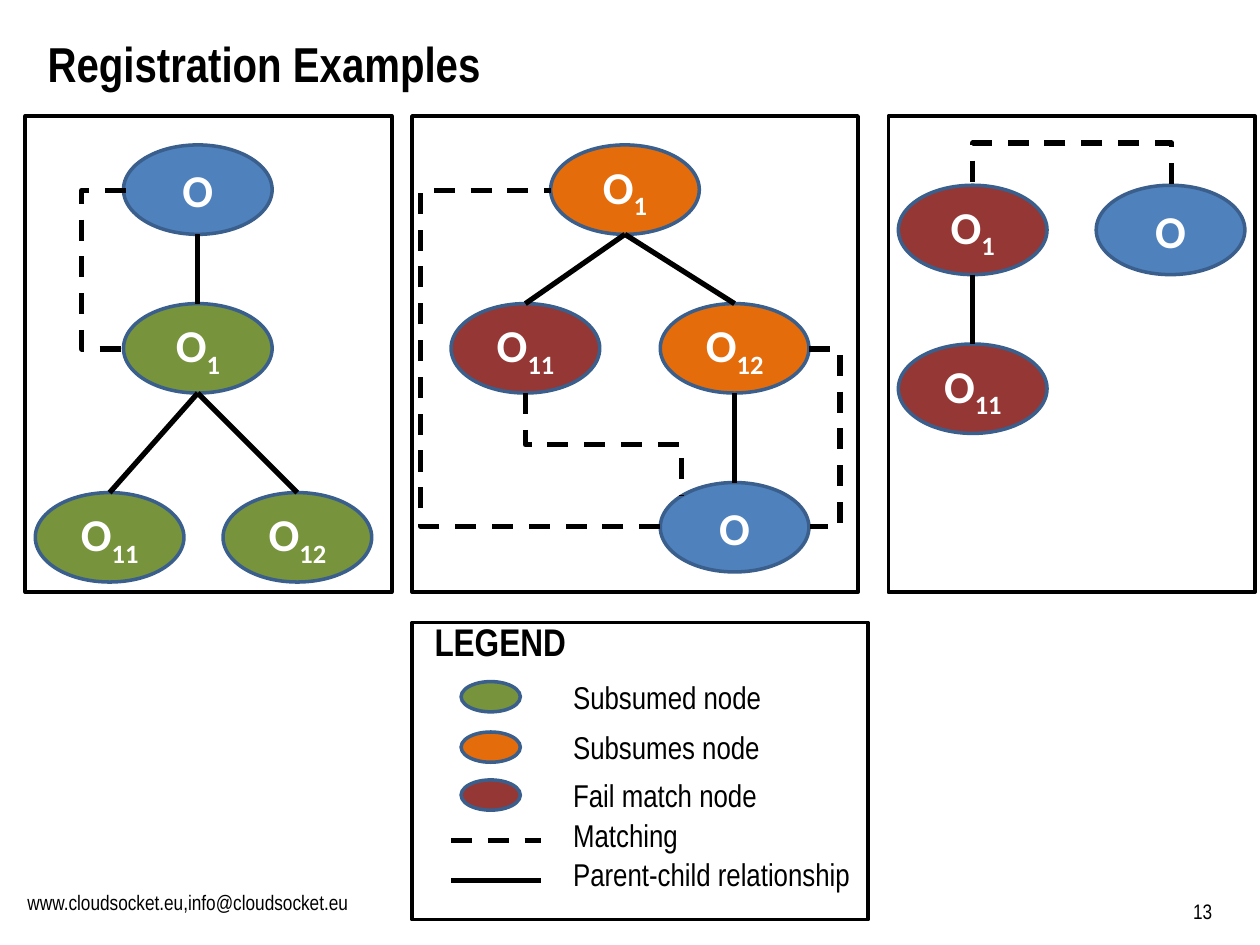
from pptx import Presentation
from pptx.dml.color import RGBColor
from pptx.enum.dml import MSO_LINE
from pptx.enum.shapes import MSO_CONNECTOR, MSO_SHAPE
from pptx.enum.text import MSO_ANCHOR, PP_ALIGN
from pptx.oxml.ns import qn
from pptx.util import Inches, Pt
from lxml.etree import SubElement

BLACK = RGBColor(0x00, 0x00, 0x00)
WHITE = RGBColor(0xFF, 0xFF, 0xFF)
BLUE = RGBColor(0x4F, 0x81, 0xBD)
GREEN = RGBColor(0x77, 0x93, 0x3C)
ORANGE = RGBColor(0xE4, 0x6C, 0x0A)
RED = RGBColor(0x95, 0x37, 0x35)
OUTLINE = RGBColor(0x3A, 0x5F, 0x8C)
NODE_WIDTH, NODE_HEIGHT = 1.18, 0.71

deck = Presentation()
deck.slide_width, deck.slide_height = Inches(10), Inches(7.5)
page = deck.slides.add_slide(deck.slide_layouts[6])


def add_outlined(kind, area, fill, outline):
    shape = page.shapes.add_shape(kind, *map(Inches, area))
    shape.shadow.inherit = False
    if fill is None:
        shape.fill.background()
    else:
        shape.fill.solid()
        shape.fill.fore_color.rgb = fill
    shape.line.color.rgb = outline
    shape.line.width = Pt(2)
    return shape


def add_line(start, end, dashed=False, bend=None, vertical=False):
    """Draw a line; bend is the x (or y, if vertical) of an elbow's middle part."""
    (x1, y1), (x2, y2) = start, end
    kind = MSO_CONNECTOR.STRAIGHT if bend is None else MSO_CONNECTOR.ELBOW
    if vertical:
        # A quarter turn about the centre makes the elbow leave downwards.
        middle_x, middle_y = (x1 + x2) / 2, (y1 + y2) / 2
        half_x, half_y = (y2 - y1) / 2, (x1 - x2) / 2
        ends = (middle_x - half_x, middle_y - half_y, middle_x + half_x, middle_y + half_y)
    else:
        ends = (x1, y1, x2, y2)
    line = page.shapes.add_connector(kind, *map(Inches, ends))
    properties = line._element.spPr
    if vertical:
        properties.find(qn("a:xfrm")).set("rot", "5400000")
    if bend is not None:
        share = (bend - y1) / (y2 - y1) if vertical else (bend - x1) / (x2 - x1)
        guides = properties.find(qn("a:prstGeom")).get_or_add_avLst()
        SubElement(guides, qn("a:gd"), name="adj1", fmla=f"val {round(share * 100000)}")
    line.line.color.rgb = BLACK
    line.line.width = Pt(3)
    if dashed:
        line.line.dash_style = MSO_LINE.DASH
    SubElement(properties, qn("a:effectLst"))
    return line


# Panels and legend frame
for frame in [(0.2, 0.92, 2.91, 3.78), (3.27, 0.92, 3.54, 3.78),
              (7.05, 0.92, 2.91, 3.78), (3.27, 4.94, 3.62, 2.36)]:
    add_outlined(MSO_SHAPE.RECTANGLE, frame, None, BLACK)

# Nodes: key, subscript, left, top, colour
nodes = {}
for key, subscript, left, top, colour in [
    ("first O", "", 0.98, 1.15, BLUE),
    ("first O1", "1", 0.98, 2.41, GREEN),
    ("first O11", "11", 0.28, 3.91, GREEN),
    ("first O12", "12", 1.77, 3.91, GREEN),
    ("second O1", "1", 4.37, 1.15, ORANGE),
    ("second O11", "11", 3.58, 2.41, RED),
    ("second O12", "12", 5.24, 2.41, ORANGE),
    ("second O", "", 5.24, 3.83, BLUE),
    ("third O1", "1", 7.13, 1.47, RED),
    ("third O11", "11", 7.13, 2.73, RED),
    ("third O", "", 8.7, 1.47, BLUE),
]:
    node = add_outlined(MSO_SHAPE.OVAL, (left, top, NODE_WIDTH, NODE_HEIGHT), colour, OUTLINE)
    node.text_frame.vertical_anchor = MSO_ANCHOR.MIDDLE
    paragraph = node.text_frame.paragraphs[0]
    paragraph.alignment = PP_ALIGN.CENTER
    for text in filter(None, ("O", subscript)):
        span = paragraph.add_run()
        span.text = text
        span.font.name, span.font.size, span.font.bold = "Calibri", Pt(26), True
        span.font.color.rgb = WHITE
        if text == subscript:
            span.font._element.set("baseline", "-25000")
    nodes[key] = (node, left + NODE_WIDTH / 2, top)

# Parent-child lines
for parent, child in [
    ("first O", "first O1"), ("first O1", "first O11"), ("first O1", "first O12"),
    ("second O1", "second O11"), ("second O1", "second O12"),
    ("second O12", "second O"), ("third O1", "third O11"),
]:
    _, parent_x, parent_top = nodes[parent]
    child_node, child_x, child_top = nodes[child]
    line = add_line((parent_x, parent_top + NODE_HEIGHT), (child_x, child_top))
    line.end_connect(child_node, 0)

# Matching lines
for start, end, bend, vertical in [
    ((1, 1.51), (0.98, 2.77), 0.65, False),
    ((5.24, 4.18), (4.37, 1.51), 3.34, False),
    ((4.17, 3.12), (5.41, 3.93), 3.53, True),
    ((6.42, 2.77), (6.43, 4.18), 6.67, False),
    ((9.3, 1.46), (7.72, 1.47), 1.13, True),
]:
    add_line(start, end, True, bend, vertical)

# Legend keys
for top, colour in [(5.41, GREEN), (5.81, ORANGE), (6.19, RED)]:
    add_outlined(MSO_SHAPE.OVAL, (3.66, top, 0.47, 0.24), colour, OUTLINE)
for y, dashed in [(6.67, True), (6.99, False)]:
    add_line((3.58, y), (4.29, y), dashed)

# Texts: wording, area, size, bold
for text, area, size, bold in [
    ("Registration Examples", (0.28, 0.22, 9.45, 1.01), 28, True),
    ("LEGEND", (3.35, 4.86, 3.39, 0.47), 22, True),
    ("Subsumed node", (4.45, 5.33, 2.28, 0.4), 18, False),
    ("Subsumes node", (4.45, 5.73, 2.28, 0.4), 18, False),
    ("Fail match node", (4.45, 6.11, 2.05, 0.4), 18, False),
    ("Matching", (4.45, 6.43, 2.05, 0.4), 18, False),
    ("Parent-child relationship", (4.45, 6.74, 2.44, 0.4), 18, False),
    ("www.cloudsocket.eu,info@cloudsocket.eu", (0.12, 7.01, 2.84, 0.31), 12, False),
]:
    box = page.shapes.add_textbox(*map(Inches, area))
    box.text_frame.word_wrap = True
    box.text_frame.text = text
    font = box.text_frame.paragraphs[0].runs[0].font
    font.name, font.size, font.bold = "Arial Narrow", Pt(size), bold
    font.color.rgb = BLACK

number = page.shapes.add_textbox(Inches(6.89), Inches(6.82), Inches(2.83), Inches(0.56))
number.text_frame.word_wrap = True
number.text_frame.vertical_anchor = MSO_ANCHOR.BOTTOM
number.text_frame.text = "13"
paragraph = number.text_frame.paragraphs[0]
paragraph.alignment = PP_ALIGN.RIGHT
font = paragraph.runs[0].font
font.name, font.size = "Arial Narrow", Pt(12)
font.color.rgb = BLACK

deck.save("out.pptx")
